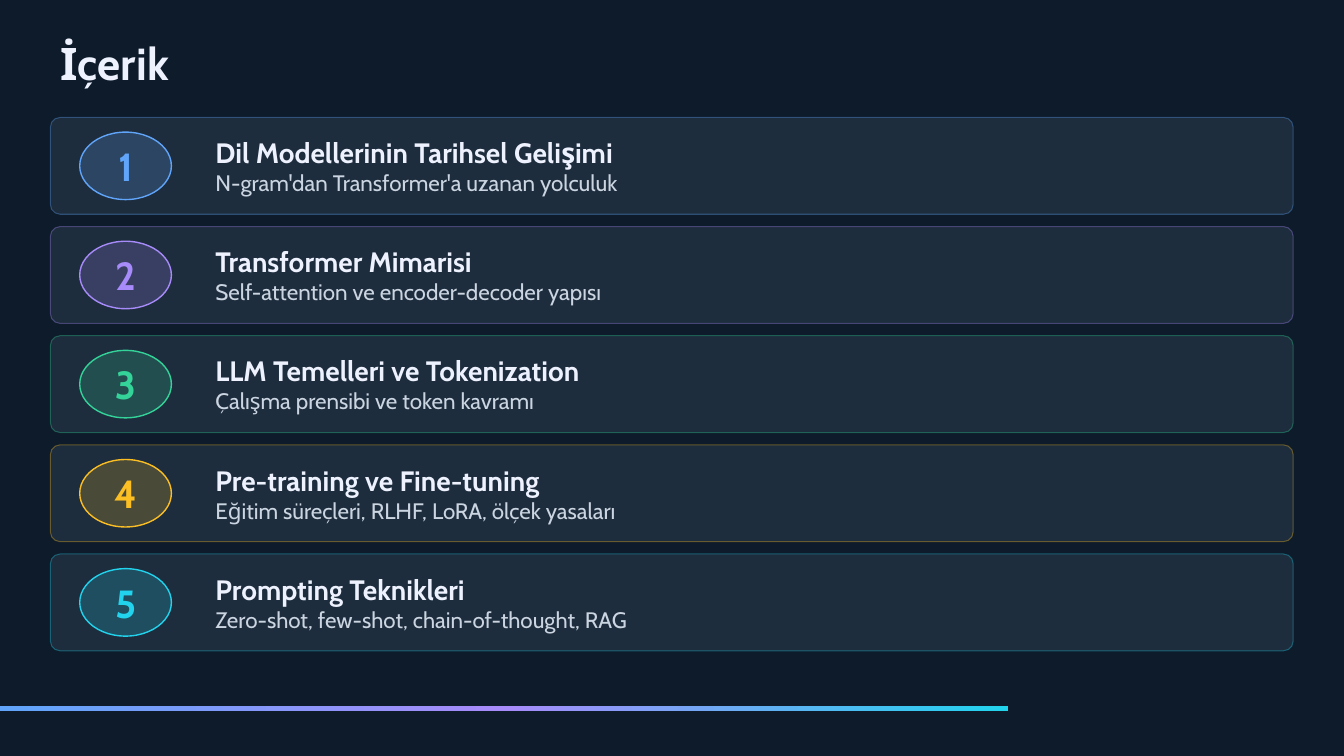
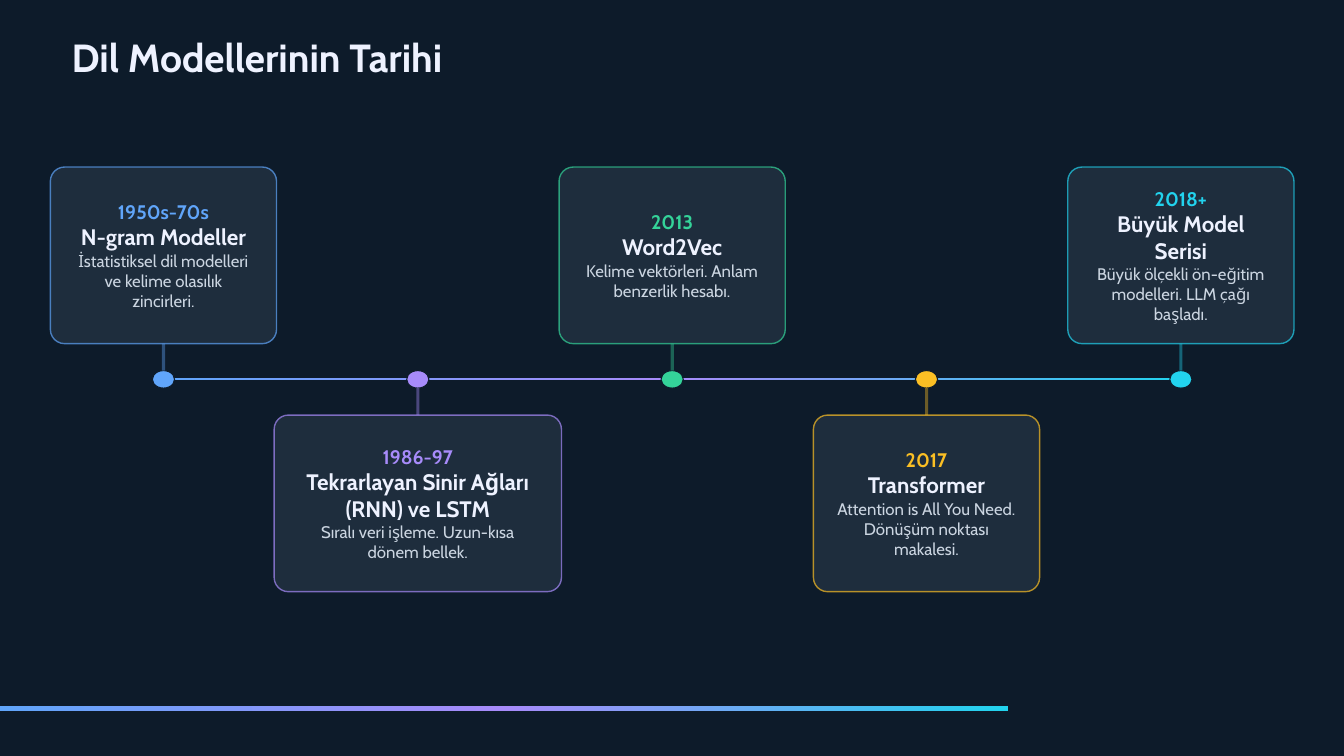
from copy import deepcopy

from lxml.etree import SubElement
from pptx import Presentation
from pptx.dml.color import RGBColor as RGB
from pptx.enum.shapes import MSO_CONNECTOR as LINK, MSO_SHAPE as FORM
from pptx.enum.text import MSO_ANCHOR as ANCHOR, MSO_AUTO_SIZE as AUTO, PP_ALIGN as ALIGN
from pptx.oxml.ns import qn
from pptx.util import Cm, Pt

NIGHT = RGB(0x0D, 0x1B, 0x2A)
PANEL = RGB(0x1E, 0x2D, 0x3D)
WHITE = RGB(0xEE, 0xF2, 0xFF)
GREY = RGB(0xCB, 0xD5, 0xE1)
BLUE = RGB(0x60, 0xA5, 0xFA)
VIOLET = RGB(0xA7, 0x8B, 0xFA)
GREEN = RGB(0x34, 0xD3, 0x99)
AMBER = RGB(0xFB, 0xBF, 0x24)
CYAN = RGB(0x22, 0xD3, 0xEE)
HUES = [BLUE, VIOLET, GREEN, AMBER, CYAN]
FADE = [(0, BLUE), (0.5, VIOLET), (1, CYAN)]

FONT = "Cabin"
HEAD = {"size": Pt(20), "bold": True}
NOTE = {"size": Pt(16), "bold": False}
BADGE = {"size": Pt(28), "bold": True}
YEAR = {"size": Pt(14), "bold": True}
NAME = {"size": Pt(16), "bold": True}
BODY = {"size": Pt(12), "bold": False}

TOPICS = [
    ("Dil Modellerinin Tarihsel Gelişimi", "N-gram'dan Transformer'a uzanan yolculuk"),
    ("Transformer Mimarisi", "Self-attention ve encoder-decoder yapısı"),
    ("LLM Temelleri ve Tokenization", "Çalışma prensibi ve token kavramı"),
    ("Pre-training ve Fine-tuning", "Eğitim süreçleri, RLHF, LoRA, ölçek yasaları"),
    ("Prompting Teknikleri", "Zero-shot, few-shot, chain-of-thought, RAG"),
]
EVENTS = [
    ("1950s-70s", "N-gram Modeller", "İstatistiksel dil modelleri ve kelime olasılık zincirleri.", 5.7),
    ("1986-97", "Tekrarlayan Sinir Ağları (RNN) ve LSTM", "Sıralı veri işleme. Uzun-kısa dönem bellek.", 7.24),
    ("2013", "Word2Vec", "Kelime vektörleri. Anlam benzerlik hesabı.", 5.7),
    ("2017", "Transformer", "Attention is All You Need. Dönüşüm noktası makalesi.", 5.7),
    ("2018+", "Büyük Model Serisi", "Büyük ölçekli ön-eğitim modelleri. LLM çağı başladı.", 5.7),
]


def apply(item, style):
    """Set every attribute named in a style dict."""
    for key, value in style.items():
        setattr(item, key, value)


def write(frame, lines, align=ALIGN.LEFT):
    """Fill a text frame with (text, colour, style) paragraphs."""
    apply(frame, {"word_wrap": True, "vertical_anchor": ANCHOR.MIDDLE})
    for i, (text, hue, style) in enumerate(lines):
        para = frame.paragraphs[0] if i == 0 else frame.add_paragraph()
        para.alignment = align
        run = para.add_run()
        run.text = text
        apply(run.font, {"name": FONT, **style})
        run.font.color.rgb = hue


def dim(shape, part, share):
    """Make the solid fill or line of a shape partly transparent."""
    tint = shape.element.spPr.xpath(part + "a:solidFill/a:srgbClr")[0]
    SubElement(tint, qn("a:alpha")).set("val", str(share * 1000))


def draw(slide, form, box, fill, line=None, width=1):
    """Add a flat preset shape in a box given in centimetres."""
    shape = slide.shapes.add_shape(form, *map(Cm, box))
    shape.shadow.inherit = False
    shape.fill.solid()
    shape.fill.fore_color.rgb = fill
    if line is None:
        shape.line.fill.background()
    else:
        shape.line.color.rgb = line
        shape.line.width = Pt(width)
    return shape


def band(slide, box):
    """Add a thin bar that fades through the three theme hues."""
    bar = draw(slide, FORM.RECTANGLE, box, BLUE)
    bar.fill.gradient()
    bar.fill.gradient_angle = 0
    stops = bar.element.spPr.xpath("a:gradFill/a:gsLst")[0]
    stops.insert(1, deepcopy(stops[0]))
    for stop, (place, hue) in zip(bar.fill.gradient_stops, FADE):
        stop.color.rgb = hue
        stop.position = place
    return bar


def panel(slide, box, hue, round_by, width, share):
    """Add a rounded card with a dimmed coloured border."""
    card = draw(slide, FORM.ROUNDED_RECTANGLE, box, PANEL, hue, width)
    card.adjustments[0] = round_by
    dim(card, "a:ln/", share)
    return card


def start(deck, text, box, size):
    """Add a slide and set its title."""
    slide = deck.slides.add_slide(deck.slide_layouts[5])
    title = slide.shapes.title
    apply(title, dict(zip(("left", "top", "width", "height"), map(Cm, box))))
    title.text_frame.auto_size = AUTO.NONE
    write(title.text_frame, [(text, WHITE, {"size": Pt(size), "bold": True})])
    return slide


def topic(slide, box, number, hue, head, note):
    """Place one numbered agenda row in its box."""
    left, top, wide, high = box
    panel(slide, box, hue, 0.1, 0.75, 35)
    badge = draw(slide, FORM.OVAL, (left + 0.74, top + (high - 1.7) / 2, 2.31, 1.7), hue, hue)
    dim(badge, "", 20)
    frame = badge.text_frame
    write(frame, [(str(number), hue, BADGE)], ALIGN.CENTER)
    apply(frame, {"margin_left": 0, "margin_right": 0, "margin_top": 0,
                  "margin_bottom": 0, "word_wrap": False})
    text = slide.shapes.add_textbox(
        *map(Cm, (left + 3.91, top + (high - 2) / 2, wide - 4.62, 2)))
    write(text.text_frame, [(head, WHITE, HEAD), (note, GREY, NOTE)])


def event(slide, mid, axis, above, hue, data):
    """Place a dot, stem and card around a point of the axis."""
    year, name, body, wide = data
    high, gap = 4.45, 0.9
    top = axis - gap - high if above else axis + gap
    dot = draw(slide, FORM.OVAL, (mid - 0.28, axis - 0.22, 0.56, 0.44), hue, NIGHT, 0.75)
    card = panel(slide, (mid - wide / 2, top, wide, high), hue, 0.08, 1, 70)
    write(card.text_frame, [(year, hue, YEAR), (name, WHITE, NAME), (body, GREY, BODY)],
          ALIGN.CENTER)
    apply(card.text_frame, {"margin_left": Cm(0.43), "margin_right": Cm(0.43),
                            "margin_top": Cm(0.3), "margin_bottom": Cm(0.3)})
    stem = slide.shapes.add_connector(LINK.STRAIGHT, 0, 0, 0, 0)
    stem.begin_connect(card, 2 if above else 0)
    stem.end_connect(dot, 0 if above else 2)
    stem.line.color.rgb = hue
    stem.line.width = Pt(2.25)
    dim(stem, "a:ln/", 40)
    SubElement(stem.element.spPr, qn("a:effectLst"))


def agenda(deck):
    """Build the contents slide."""
    slide = start(deck, "İçerik", (1.27, 0.64, 31.32, 1.9), 32)
    for i, (hue, (head, note)) in enumerate(zip(HUES, TOPICS)):
        topic(slide, (1.27, 2.96 + 2.75 * i, 31.32, 2.44), i + 1, hue, head, note)
    return slide


def history(deck):
    """Build the timeline slide."""
    slide = start(deck, "Dil Modellerinin Tarihi", (1.55, 0.64, 30.76, 1.57), 28)
    first, step, axis = 4.12, 6.41, 9.56
    band(slide, (first, axis - 0.03, step * (len(EVENTS) - 1), 0.05))
    for i, (hue, data) in enumerate(zip(HUES, EVENTS)):
        event(slide, first + step * i, axis, i % 2 == 0, hue, data)


def main():
    """Build and save the deck."""
    deck = Presentation()
    apply(deck, {"slide_width": Cm(33.87), "slide_height": Cm(19.05)})
    master = deck.slide_master
    master.background.fill.solid()
    master.background.fill.fore_color.rgb = NIGHT
    slide = agenda(deck)
    bar = band(slide, (0, 17.78, 25.4, 0.15))
    master.shapes.element.append(bar.element)
    history(deck)
    deck.save("out.pptx")


if __name__ == "__main__":
    main()
